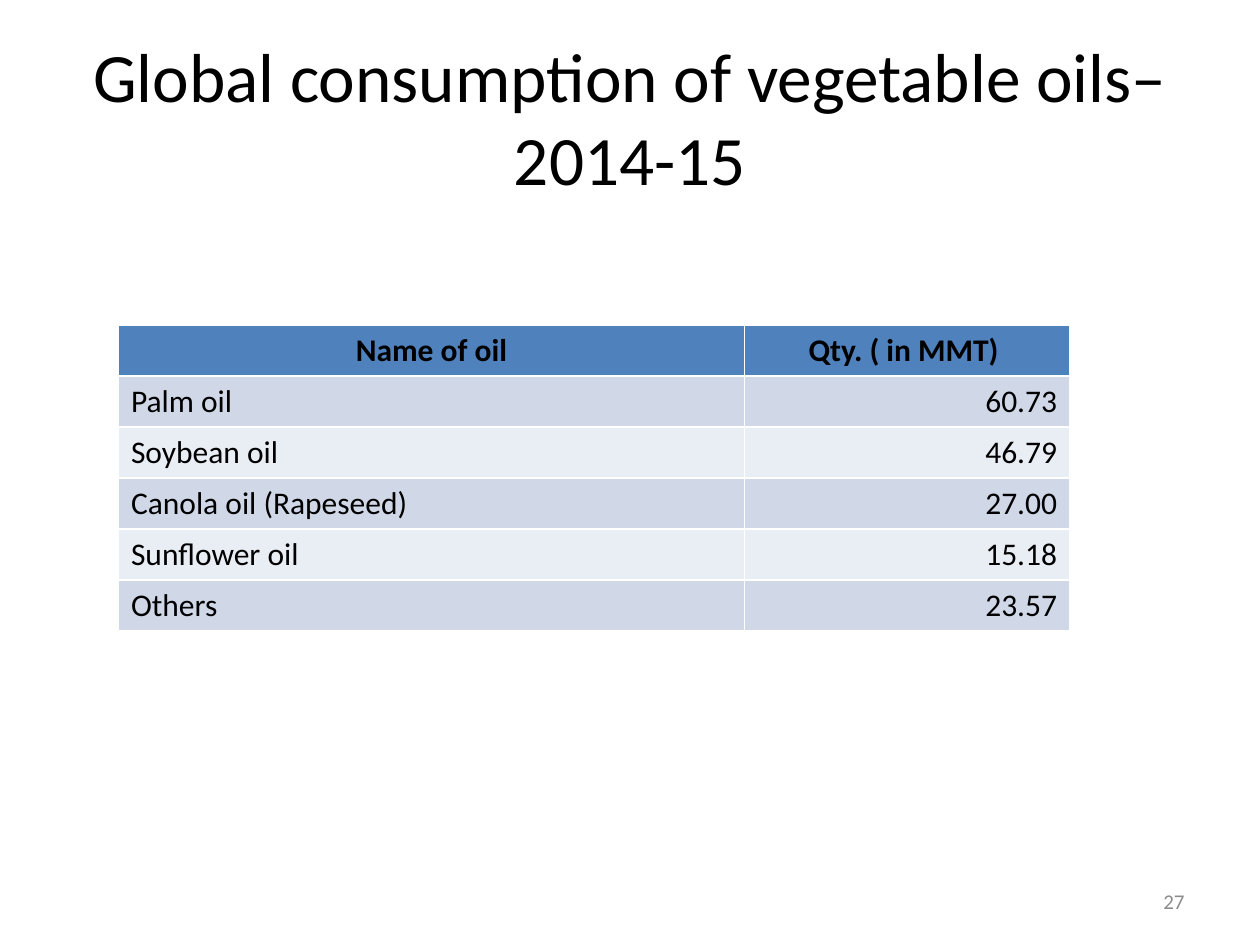
from dataclasses import dataclass

from pptx import Presentation
from pptx.dml.color import RGBColor
from pptx.enum.text import MSO_ANCHOR, PP_ALIGN as Align
from pptx.util import Inches, Pt


@dataclass(frozen=True)
class Theme:
    font: str = "Calibri"
    ink: str = "000000"
    muted: str = "8C8C8C"
    header_fill: str = "4F81BD"
    band_fills: tuple = ("D0D8E8", "E9EDF4")
    title_size: float = 39.6
    table_size: float = 18
    number_size: float = 12


class SlideBuilder:
    def __init__(self, slide, theme):
        self.slide = slide
        self.theme = theme

    def style_text(self, frame, size, color, align, bold=False):
        for paragraph in frame.paragraphs:
            paragraph.alignment = align
            for run in paragraph.runs:
                run.font.name = self.theme.font
                run.font.size = Pt(size)
                run.font.bold = bold
                run.font.color.rgb = RGBColor.from_string(color)

    def text(self, wording, box, size, color, align):
        frame = self.slide.shapes.add_textbox(*map(Inches, box)).text_frame
        frame.word_wrap = True
        frame.vertical_anchor = MSO_ANCHOR.MIDDLE
        frame.text = wording
        self.style_text(frame, size, color, align)

    def table(self, rows, left, top, column_widths, row_height):
        """Add a table with a header row, banded rows and figures on the right.

        White cell borders come from the default table style.
        """
        theme = self.theme
        table = self.slide.shapes.add_table(
            len(rows), len(column_widths), Inches(left), Inches(top),
            Inches(sum(column_widths)), Inches(row_height * len(rows))).table
        for column, width in zip(table.columns, column_widths):
            column.width = Inches(width)
        for r, values in enumerate(rows):
            table.rows[r].height = Inches(row_height)
            is_header = r == 0
            fill = theme.header_fill if is_header else theme.band_fills[(r - 1) % 2]
            for c, value in enumerate(values):
                cell = table.cell(r, c)
                cell.fill.solid()
                cell.fill.fore_color.rgb = RGBColor.from_string(fill)
                cell.text_frame.text = value
                body_align = Align.RIGHT if c else Align.LEFT
                self.style_text(cell.text_frame, theme.table_size, theme.ink,
                                Align.CENTER if is_header else body_align, is_header)


OIL_CONSUMPTION = [
    ("Name of oil", "Qty. ( in MMT) "),
    ("Palm oil", "60.73"),
    ("Soybean oil", "46.79"),
    ("Canola oil (Rapeseed)", "27.00"),
    ("Sunflower oil", "15.18"),
    ("Others", "23.57"),
]


def main():
    deck = Presentation()
    deck.slide_width, deck.slide_height = Inches(10), Inches(7.5)
    theme = Theme()
    builder = SlideBuilder(deck.slides.add_slide(deck.slide_layouts[6]), theme)

    builder.text("Global consumption of vegetable oils– 2014-15",
                 (0.5, 0.3, 9, 1.25), theme.title_size, theme.ink, Align.CENTER)
    builder.table(OIL_CONSUMPTION, left=0.94, top=2.58,
                  column_widths=(4.97, 2.58), row_height=0.405)
    builder.text("27", (7.17, 6.95, 2.33, 0.4),
                 theme.number_size, theme.muted, Align.RIGHT)

    deck.save("out.pptx")


if __name__ == "__main__":
    main()
